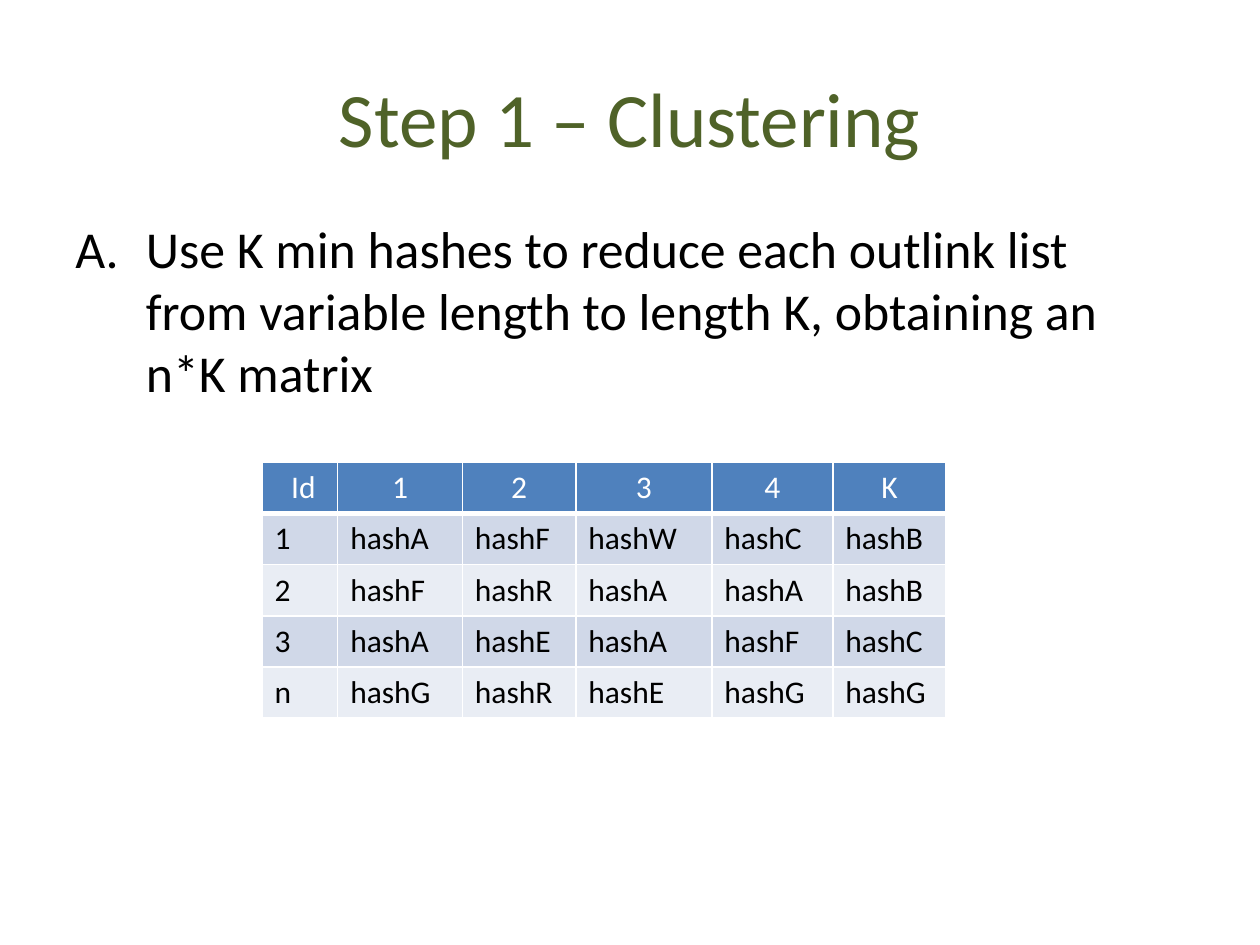
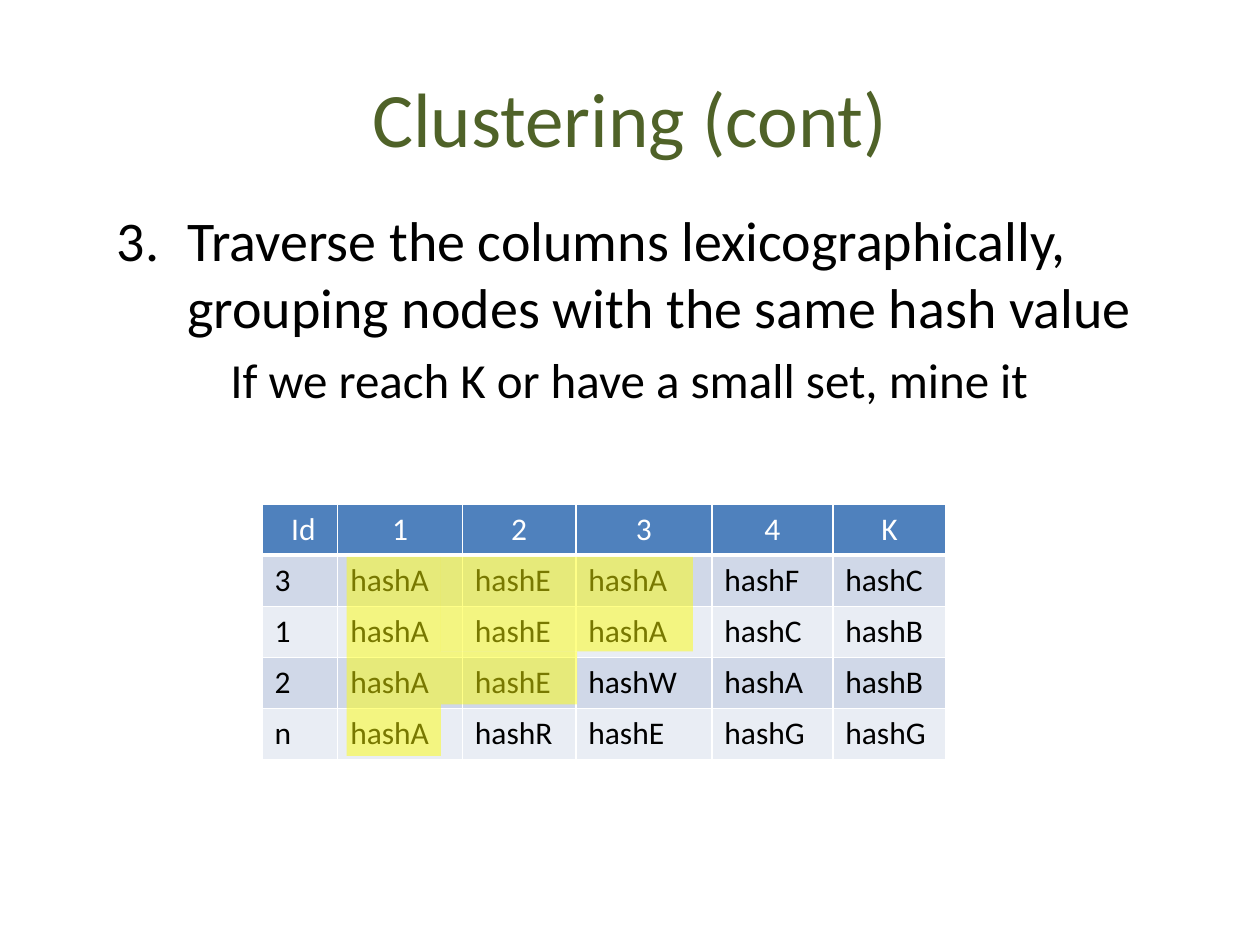
from lxml import etree
from pptx import Presentation
from pptx import util as u
from pptx.dml.color import RGBColor
from pptx.enum import shapes, text
from pptx.oxml import ns

# Shared look
FONT = "Calibri"
GREEN, BLACK, WHITE = "4F6228", "000000", "FFFFFF"
HEAD, BANDS, MARK = "4F81BD", ("D0D8E8", "E9EDF4"), "FFFF00"
COLS = (0.6, 0.99, 0.9, 1.08, 0.96, 0.9)
LABELS = (" Id", "1", "2", "3", "4", "K")


def color(code):
    return RGBColor.from_string(code)


def node(parent, tag, **attrs):
    return etree.SubElement(parent, ns.qn(tag), attrs)


def write(para, words, size=18, tint=BLACK, align=None, before=0):
    """Put formatted text in a paragraph."""
    para.alignment = align
    para.space_before = u.Pt(before)
    run = para.add_run()
    run.text = words
    run.font.name = FONT
    run.font.size = u.Pt(size)
    run.font.color.rgb = color(tint)


def indent(para, left, hang=0, number=None, start=1):
    """Set the indent and, if given, the automatic numbering."""
    props = para._p.get_or_add_pPr()
    props.set("marL", str(u.Inches(left)))
    props.set("indent", str(u.Inches(-hang)))
    if number:
        node(props, "a:buAutoNum", type=number, startAt=str(start))


def frame(slide, left, top, width, height):
    box = slide.shapes.add_textbox(*map(u.Inches, (left, top, width, height)))
    box.text_frame.word_wrap = True
    return box.text_frame


def title(slide, words):
    area = frame(slide, 0.5, 0.3, 9, 1.25)
    area.vertical_anchor = text.MSO_ANCHOR.MIDDLE
    write(area.paragraphs[0], words, size=44, tint=GREEN,
          align=text.PP_ALIGN.CENTER)


def step(area, words, size, number, start=1):
    """Write the numbered point that opens a body text."""
    para = area.paragraphs[0]
    write(para, words, size=size, before=size / 5)
    indent(para, 0.56, 0.56, number, start)


def edge(cell, foot):
    """Draw white cell borders; foot is the width of the lower one."""
    props = cell._tc.get_or_add_tcPr()
    for side, width in (("L", 1), ("R", 1), ("T", 1), ("B", foot)):
        line = node(props, "a:ln" + side, w=str(u.Pt(width)))
        node(node(line, "a:solidFill"), "a:srgbClr", val=WHITE)


def matrix(slide, top, rows):
    """Add the hash table; each row is a string of an id and hash letters."""
    lines = [LABELS] + [[row[0]] + ["hash" + key for key in row[1:]]
                        for row in rows]
    grid = slide.shapes.add_table(
        len(lines), len(COLS), u.Inches(2.08), u.Inches(top),
        u.Inches(sum(COLS)), u.Inches(2.03)).table
    for col, width in zip(grid.columns, COLS):
        col.width = u.Inches(width)
    for r, line in enumerate(lines):
        head = r == 0
        for c, words in enumerate(line):
            cell = grid.cell(r, c)
            edge(cell, 3 if head else 1)
            cell.fill.solid()
            cell.fill.fore_color.rgb = color(HEAD if head else BANDS[(r - 1) % 2])
            write(cell.text_frame.paragraphs[0], words,
                  tint=WHITE if head else BLACK,
                  align=text.PP_ALIGN.CENTER if head else None)


def mark(slide, left, top, width, height):
    """Lay a see-through highlight over the table."""
    box = slide.shapes.add_shape(shapes.MSO_SHAPE.RECTANGLE,
                                 *map(u.Inches, (left, top, width, height)))
    box.shadow.inherit = False
    box.line.fill.background()
    box.fill.solid()
    box.fill.fore_color.rgb = color(MARK)
    tone = box._element.spPr.find(".//" + ns.qn("a:srgbClr"))
    node(tone, "a:alpha", val="47000")


def reduce_slide(slide):
    title(slide, "Step 1 – Clustering")
    area = frame(slide, 0.5, 1.67, 8.83, 1.5)
    step(area, "Use K min hashes to reduce each outlink list from variable "
         "length to length K, obtaining an n*K matrix", 29.6, "alphaUcPeriod")
    matrix(slide, 3.67, ("1AFWCB", "2FRAAB", "3AEAFC", "nGREGG"))


def group_slide(slide):
    title(slide, "Clustering (cont)")
    area = frame(slide, 0.83, 1.58, 8.67, 4.78)
    step(area, "Traverse the columns lexicographically, grouping nodes with "
         "the same hash value", 32, "arabicPeriod", 3)
    note = area.add_paragraph()
    note.level = 1
    write(note, "If we reach K or have a small set, mine it", size=28,
          before=5.6)
    indent(note, 0.9)
    matrix(slide, 4, ("3AEAFC", "1AEACB", "2AEWAB", "nAREGG"))
    # Groups of equal hashes
    for place in ((2.75, 4.42, 0.75, 1.58), (3.5, 4.42, 2, 0.75),
                  (3.5, 5.17, 1.08, 0.42)):
        mark(slide, *place)


def main():
    deck = Presentation()
    deck.slide_width, deck.slide_height = u.Inches(10), u.Inches(7.5)
    for build in (reduce_slide, group_slide):
        build(deck.slides.add_slide(deck.slide_layouts[6]))
    deck.save("out.pptx")


if __name__ == "__main__":
    main()
